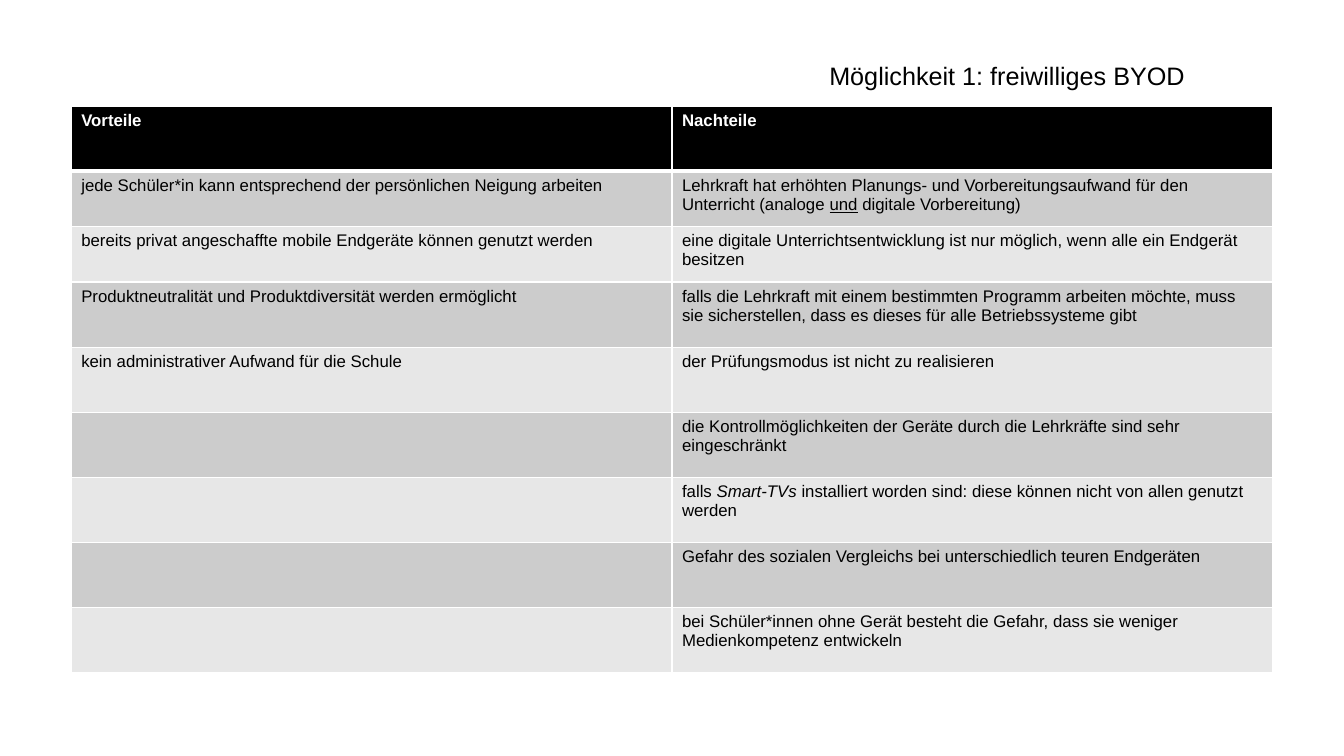
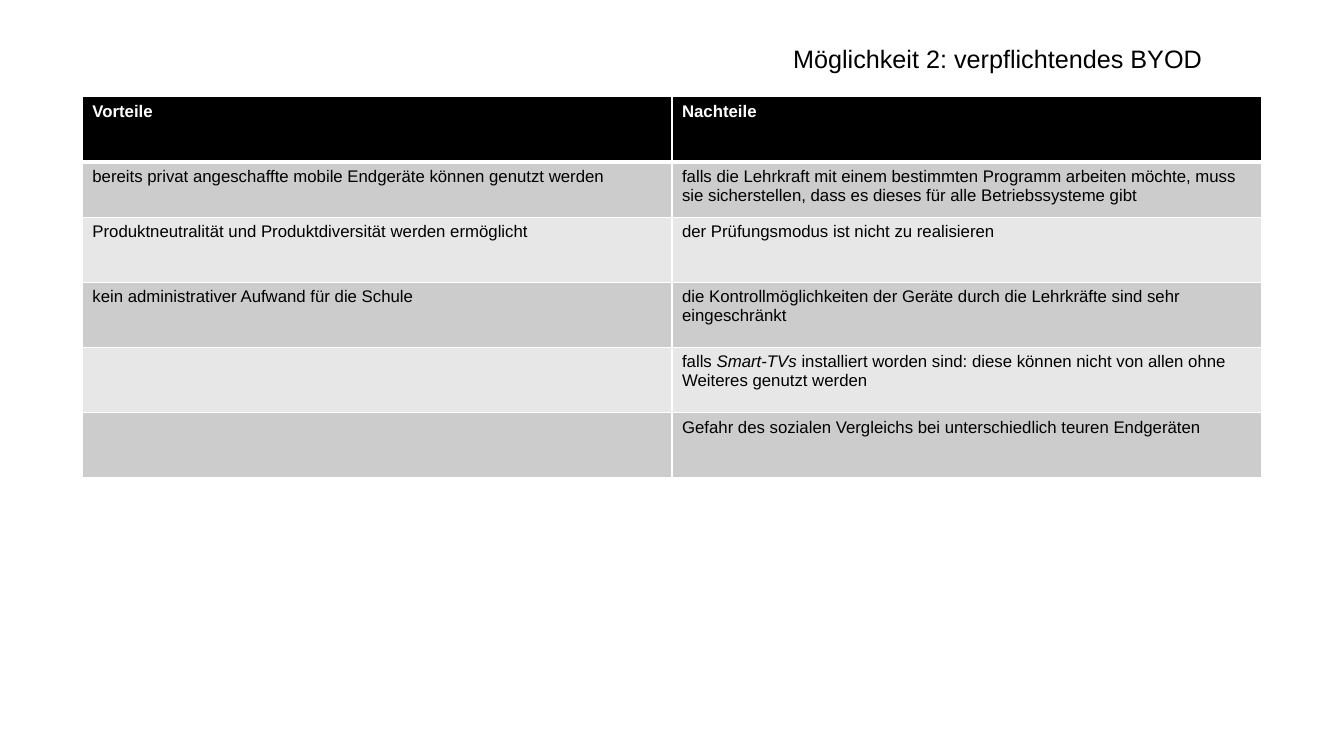
import pptx
import pptx.util
import pptx.dml.color
import pptx.oxml
import pptx.oxml.ns

Cm, Pt = pptx.util.Cm, pptx.util.Pt

# Content: a cell is a string or a list of (text, style) runs
HEAD = ("Vorteile", "Nachteile")
OWN = "bereits privat angeschaffte mobile Endgeräte können genutzt werden"
FREE = "Produktneutralität und Produktdiversität werden ermöglicht"
ADMIN = "kein administrativer Aufwand für die Schule"
APPS = ("falls die Lehrkraft mit einem bestimmten Programm arbeiten möchte, muss "
        "sie sicherstellen, dass es dieses für alle Betriebssysteme gibt")
EXAM = "der Prüfungsmodus ist nicht zu realisieren"
CHECK = ("die Kontrollmöglichkeiten der Geräte durch die Lehrkräfte sind sehr "
         "eingeschränkt")
RIVAL = "Gefahr des sozialen Vergleichs bei unterschiedlich teuren Endgeräten"


def screen(rest):
    return [("falls ", ""), ("Smart-TVs", "italic"),
            (" installiert worden sind: diese können nicht von allen " + rest, "")]


SLIDES = [
    {
        "title": "Möglichkeit 1: freiwilliges BYOD",
        "box": (20.65, 1.4, 10.31),
        "top": 2.67, "col": 15.14, "low": (1, 2),
        "pros": ["jede Schüler*in kann entsprechend der persönlichen Neigung arbeiten",
                 OWN, FREE, ADMIN],
        "cons": [
            [("Lehrkraft hat erhöhten Planungs- und Vorbereitungsaufwand für den "
              "Unterricht (analoge ", ""), ("und", "underline"),
             (" digitale Vorbereitung)", "")],
            "eine digitale Unterrichtsentwicklung ist nur möglich, wenn alle ein "
            "Endgerät besitzen",
            APPS, EXAM, CHECK, screen("genutzt werden"), RIVAL,
            "bei Schüler*innen ohne Gerät besteht die Gefahr, dass sie weniger "
            "Medienkompetenz entwickeln",
        ],
    },
    {
        "title": "Möglichkeit 2: verpflichtendes BYOD",
        "box": (19.74, 0.97, 11.18),
        "top": 2.44, "col": 14.86, "low": (1,),
        "pros": [OWN, FREE, ADMIN],
        "cons": [APPS, EXAM, CHECK, screen("ohne Weiteres genutzt werden"), RIVAL],
    },
]

# Shared style
COLORS = {"text": "000000", "head": "000000", "line": "FFFFFF",
          "odd": "CCCCCC", "even": "E7E7E7"}
FONT = "Arial"
WIDE, HIGH = 33.87, 19.05
ROW, LOW = 1.64, 1.4


def color(name):
    return pptx.dml.color.RGBColor.from_string(COLORS[name])


def write(frame, text, size, tone, bold=False):
    para = frame.paragraphs[0]
    font = para.font
    font.name, font.size, font.bold = FONT, Pt(size), bold
    font.color.rgb = color(tone)
    for part, style in [(text, "")] if isinstance(text, str) else text:
        run = para.add_run()
        run.text = part
        if style:
            setattr(run.font, style, True)


def edge(cell, widths):
    props = cell._tc.get_or_add_tcPr()
    for side, width in widths.items():
        props.append(pptx.oxml.parse_xml(
            f'<a:ln{side} {pptx.oxml.ns.nsdecls("a")} w="{Pt(width)}"><a:solidFill>'
            f'<a:srgbClr val="{COLORS["line"]}"/></a:solidFill></a:ln{side}>'))


def add_grid(slide, data):
    pros, cons = data["pros"], data["cons"]
    rows = [HEAD, *zip(pros + [""] * (len(cons) - len(pros)), cons)]
    highs = [LOW if i in data["low"] else ROW for i in range(len(rows))]
    width = 2 * data["col"]
    grid = slide.shapes.add_table(
        len(rows), 2, Cm((WIDE - width) / 2), Cm(data["top"]),
        Cm(width), Cm(sum(highs))).table
    for i, row in enumerate(rows):
        grid.rows[i].height = Cm(highs[i])
        tone = "head" if i == 0 else "odd" if i % 2 else "even"
        for j, text in enumerate(row):
            cell = grid.cell(i, j)
            edge(cell, {"L": 1, "R": 1, "T": 3 if i == 1 else 1,
                        "B": 3 if i == 0 else 1})
            cell.fill.solid()
            cell.fill.fore_color.rgb = color(tone)
            write(cell.text_frame, text, 12, "line" if i == 0 else "text", i == 0)


def add_title(slide, data):
    left, top, width = data["box"]
    box = slide.shapes.add_textbox(Cm(left), Cm(top), Cm(width), Cm(1.02))
    box.text_frame.word_wrap = True
    write(box.text_frame, data["title"], 18, "text")


def main():
    deck = pptx.Presentation()
    deck.slide_width, deck.slide_height = Cm(WIDE), Cm(HIGH)
    for data in SLIDES:
        slide = deck.slides.add_slide(deck.slide_layouts[6])
        add_grid(slide, data)
        add_title(slide, data)
    deck.save("out.pptx")


if __name__ == "__main__":
    main()
